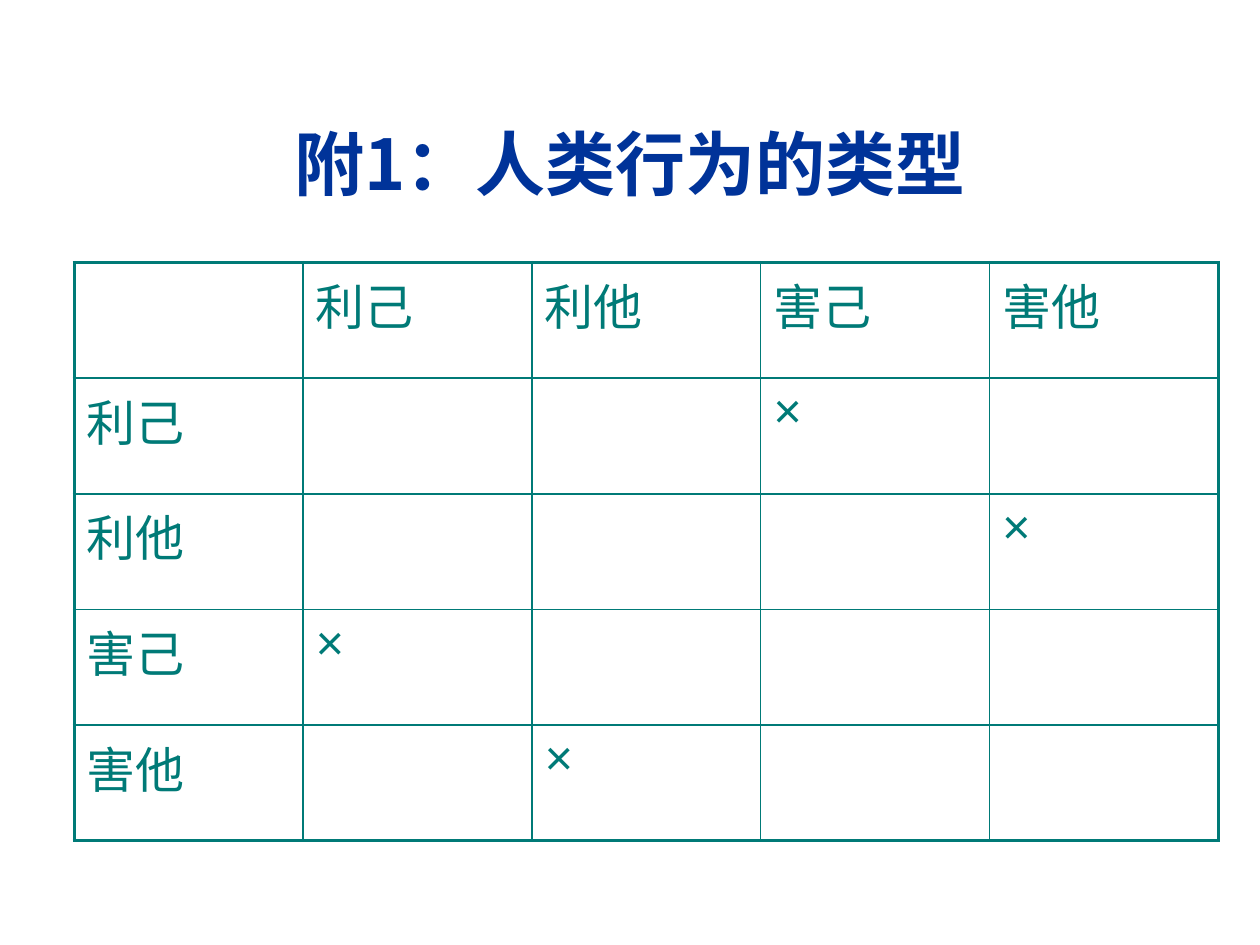
from dataclasses import dataclass

from lxml.etree import SubElement
from pptx import Presentation
from pptx.dml.color import RGBColor
from pptx.enum.text import MSO_ANCHOR, PP_ALIGN
from pptx.oxml.ns import qn
from pptx.slide import Slide
from pptx.table import Table, _Cell
from pptx.util import Pt

NAVY = RGBColor(0x00, 0x33, 0x99)
TEAL = RGBColor(0x00, 0x7A, 0x77)
TITLE_FONT = "Noto Sans CJK JP"
CELL_FONT = "Arial"
KINDS = ["利己", "利他", "害己", "害他"]
SIZE = len(KINDS) + 1
COL_WIDTH = Pt(130.75)
ROW_HEIGHT = Pt(66.1)
THIN = Pt(1)
THICK = Pt(2.25)


@dataclass(frozen=True)
class Entry:
    row: int
    col: int
    text: str


HEADS = [Entry(0, i, kind) for i, kind in enumerate(KINDS, 1)]
SIDES = [Entry(i, 0, kind) for i, kind in enumerate(KINDS, 1)]
MARKS = [Entry(row, col, "×") for row, col in [(1, 3), (2, 4), (3, 1), (4, 2)]]


def add_title(slide: Slide, text: str) -> None:
    title = slide.shapes.title
    title.left, title.top = Pt(24), Pt(48)
    title.width, title.height = Pt(672), Pt(90)
    frame = title.text_frame
    frame.text = text
    frame.vertical_anchor = MSO_ANCHOR.MIDDLE
    line = frame.paragraphs[0]
    line.alignment = PP_ALIGN.CENTER
    run = line.runs[0]
    run.font.size = Pt(40)
    run.font.bold = True
    run.font.color.rgb = NAVY
    run.font.name = TITLE_FONT
    SubElement(run.font._element, qn("a:ea"), typeface=TITLE_FONT)


def add_edge(cell: _Cell, side: str, width: int) -> None:
    props = cell._tc.get_or_add_tcPr()
    edge = SubElement(props, qn(f"a:ln{side}"), w=str(width))
    fill = SubElement(edge, qn("a:solidFill"))
    SubElement(fill, qn("a:srgbClr"), val=str(TEAL))


def style_cell(cell: _Cell, row: int, col: int) -> None:
    last = SIZE - 1
    outer = {"L": col == 0, "R": col == last, "T": row == 0, "B": row == last}
    for side, thick in outer.items():
        add_edge(cell, side, THICK if thick else THIN)
    cell.fill.background()


def write_cell(table: Table, entry: Entry) -> None:
    frame = table.cell(entry.row, entry.col).text_frame
    frame.text = entry.text
    font = frame.paragraphs[0].runs[0].font
    font.size = Pt(28)
    font.name = CELL_FONT
    font.color.rgb = TEAL


def add_grid(slide: Slide) -> None:
    table = slide.shapes.add_table(
        SIZE, SIZE, Pt(42.5), Pt(150), COL_WIDTH * SIZE, ROW_HEIGHT * SIZE
    ).table
    table.first_row = False
    table.horz_banding = False
    for col in table.columns:
        col.width = COL_WIDTH
    for row in table.rows:
        row.height = ROW_HEIGHT
    for row in range(SIZE):
        for col in range(SIZE):
            style_cell(table.cell(row, col), row, col)
    for entry in HEADS + SIDES + MARKS:
        write_cell(table, entry)


def main() -> None:
    deck = Presentation()
    deck.slide_width, deck.slide_height = Pt(720), Pt(540)
    slide = deck.slides.add_slide(deck.slide_layouts[5])
    add_title(slide, "附1：人类行为的类型")
    add_grid(slide)
    deck.save("out.pptx")


if __name__ == "__main__":
    main()
